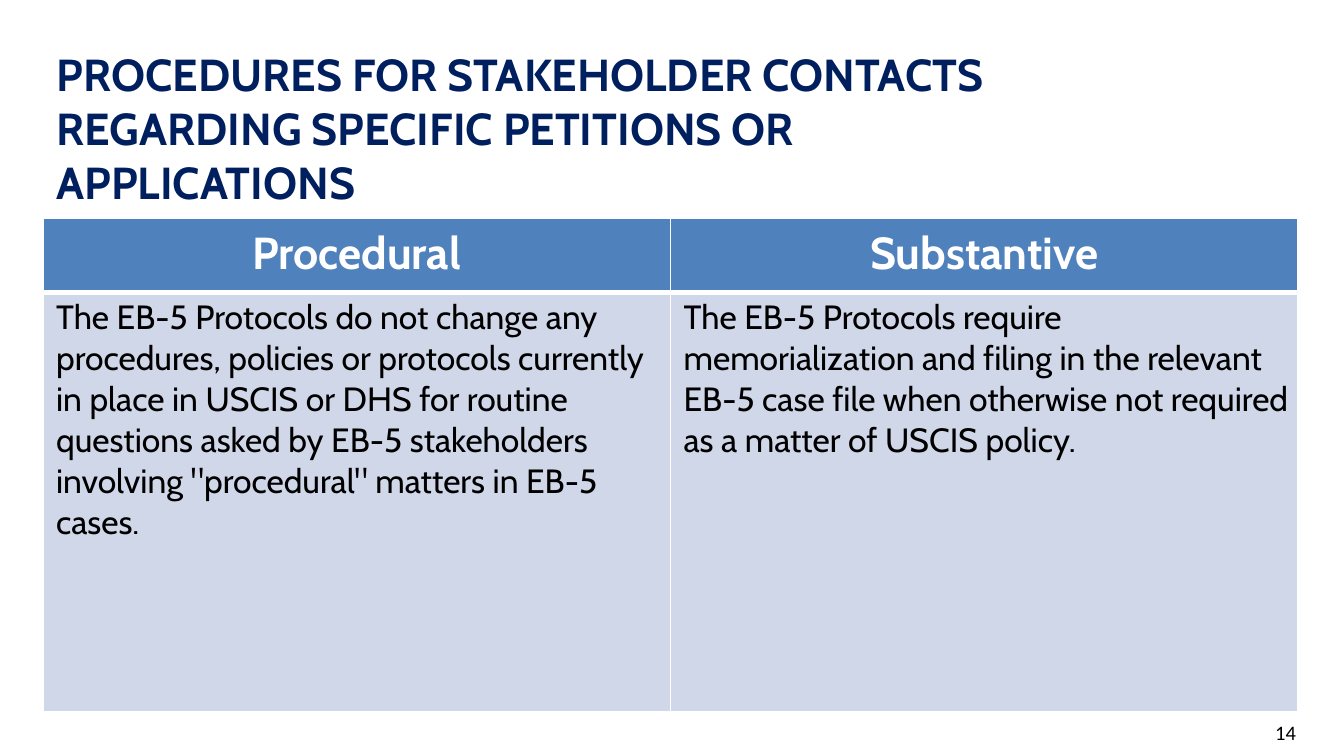
from lxml import etree
from pptx import Presentation
from pptx import util as u
from pptx.dml.color import RGBColor
from pptx.enum import text
from pptx.oxml.ns import qn

COLORS = {"navy": "001F5F", "blue": "4F81BC", "pale": "D0D7E8",
          "white": "FFFFFF", "black": "000000"}


def write(tf, words, size, color="black", font="Cabin", bold=False,
          align=text.PP_ALIGN.LEFT, left=0, top=0, spacing=None):
    """Fill a text box or table cell; left and top are margins in cm."""
    tf.margin_left, tf.margin_top = u.Cm(left), u.Cm(top)
    tf.margin_right = tf.margin_bottom = 0
    tf.word_wrap = True
    p = getattr(tf, "text_frame", tf).paragraphs[0]
    p.alignment = align
    if spacing:
        p.line_spacing = u.Pt(spacing)
    r = p.add_run()
    r.text = words
    r.font.name, r.font.size, r.font.bold = font, u.Pt(size), bold
    r.font.color.rgb = RGBColor.from_string(COLORS[color])


def set_borders(cell, **widths):
    """Draw white cell borders, with widths in points by side tag."""
    tcPr = cell._tc.get_or_add_tcPr()
    for i, (side, width) in enumerate(widths.items()):
        ln = etree.Element(qn(f"a:{side}"), w=str(u.Pt(width)))
        fill = etree.SubElement(ln, qn("a:solidFill"))
        etree.SubElement(fill, qn("a:srgbClr"), val=COLORS["white"])
        tcPr.insert(i, ln)


prs = Presentation()
prs.slide_width, prs.slide_height = u.Cm(25.4), u.Cm(14.29)
s = prs.slides.add_slide(prs.slide_layouts[6])

# Title
title = s.shapes.add_textbox(u.Cm(1.04), u.Cm(0.86), u.Cm(19.23), u.Cm(2.11))
write(title.text_frame,
      "PROCEDURES FOR STAKEHOLDER CONTACTS REGARDING SPECIFIC PETITIONS OR "
      "APPLICATIONS", 24, color="navy", bold=True, left=0.03, top=0.03)

# Slide number
number = s.shapes.add_textbox(u.Cm(23.8), u.Cm(13.67), u.Cm(0.74), u.Cm(0.46))
write(number.text_frame, "14", 11, font="Calibri", left=0.3, spacing=11.5)

# Comparison table
columns = [
    ("Procedural",
     "The EB-5 Protocols do not change any procedures, policies or protocols "
     "currently in place in USCIS or DHS for routine questions asked by EB-5 "
     "stakeholders involving \"procedural\" matters in EB-5 cases."),
    ("Substantive",
     "The EB-5 Protocols require memorialization and filing in the relevant "
     "EB-5 case file when otherwise not required as a matter of USCIS policy."),
]
table = s.shapes.add_table(2, len(columns), u.Cm(0.81), u.Cm(4.12),
                           u.Cm(23.72), u.Cm(9.34)).table
table.rows[0].height, table.rows[1].height = u.Cm(1.41), u.Cm(7.93)

for c, (heading, body) in enumerate(columns):
    table.columns[c].width = u.Cm(11.86)
    head_cell, body_cell = table.cell(0, c), table.cell(1, c)
    for cell, color in ((head_cell, "blue"), (body_cell, "pale")):
        cell.fill.solid()
        cell.fill.fore_color.rgb = RGBColor.from_string(COLORS[color])
    write(head_cell, heading, 24, color="white", bold=True,
          align=text.PP_ALIGN.CENTER, top=0.15)
    write(body_cell, body, 18, left=0.25, top=0.08)
    set_borders(head_cell, lnL=1, lnR=1, lnT=1, lnB=3)
    set_borders(body_cell, lnL=1, lnR=1, lnT=3, lnB=1)

prs.save("out.pptx")
